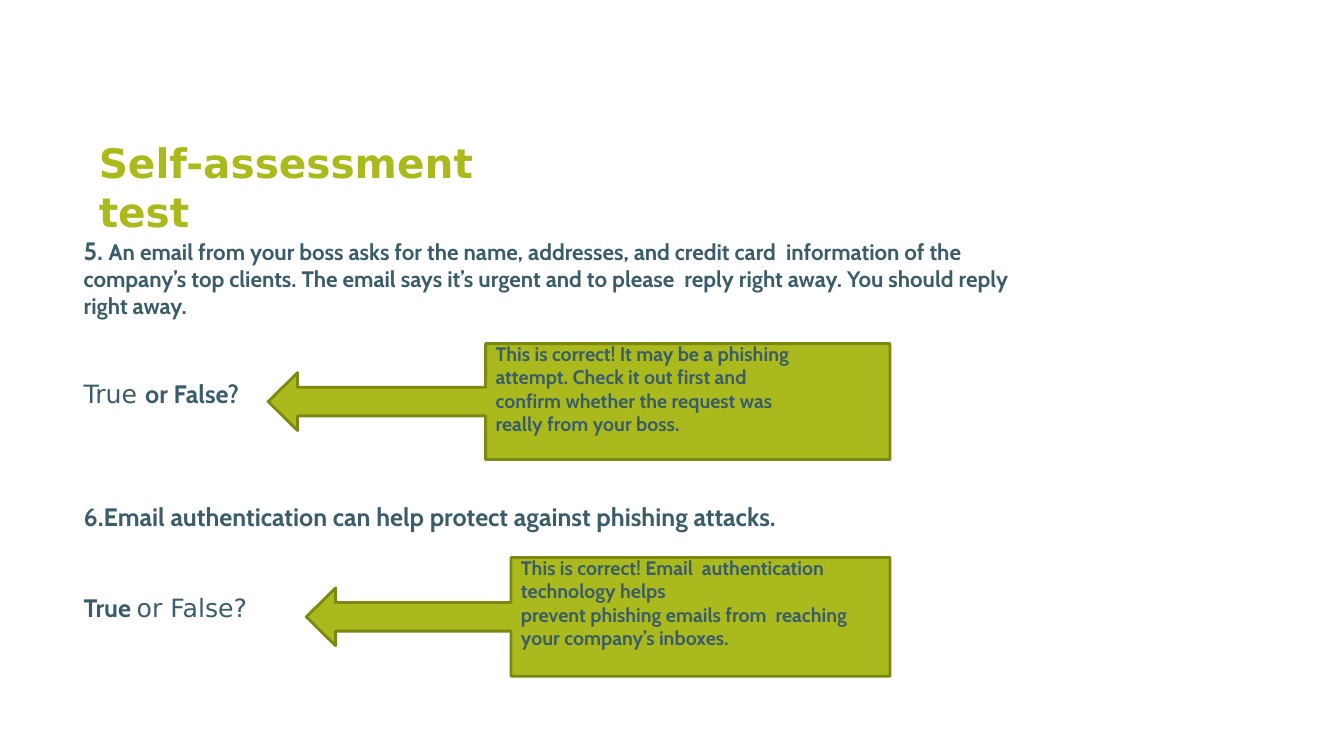
from pptx import Presentation
from pptx.dml.color import RGBColor
from pptx.util import Cm, Pt

LIME = RGBColor(0xAA, 0xBA, 0x1D)
OLIVE = RGBColor(0x7B, 0x88, 0x12)
SLATE = RGBColor(0x3B, 0x5D, 0x6A)
HEADING_FONT = "DejaVu Sans"
BODY_FONT = "Cabin"
HEAD_LENGTH, HEAD_HALF, SHAFT_HALF = 0.74, 0.73, 0.36


def add_text(slide, left, top, width, height, paragraphs, color=SLATE):
    """Place paragraphs made of (text, size, font, bold) runs in a box given in cm."""
    frame = slide.shapes.add_textbox(Cm(left), Cm(top), Cm(width), Cm(height)).text_frame
    frame.word_wrap = True
    frame.margin_left = frame.margin_top = Cm(0.03)
    frame.margin_right = frame.margin_bottom = 0
    for number, pieces in enumerate(paragraphs):
        paragraph = frame.add_paragraph() if number else frame.paragraphs[0]
        for text, size, font, bold in pieces:
            run = paragraph.add_run()
            run.text = text
            run.font.size = Pt(size)
            run.font.name = font
            run.font.bold = bold
            run.font.color.rgb = color


def add_callout(slide, left, top, right, height, body_left, answer):
    """Draw an answer panel whose arrow points left to the choice."""
    middle, bottom = top + height / 2, top + height
    neck = left + HEAD_LENGTH
    outline = [
        (neck, middle - HEAD_HALF), (neck, middle - SHAFT_HALF),
        (body_left, middle - SHAFT_HALF), (body_left, top),
        (right, top), (right, bottom), (body_left, bottom),
        (body_left, middle + SHAFT_HALF), (neck, middle + SHAFT_HALF),
        (neck, middle + HEAD_HALF),
    ]
    builder = slide.shapes.build_freeform(Cm(left), Cm(middle))
    builder.add_line_segments([(Cm(x), Cm(y)) for x, y in outline], close=True)
    panel = builder.convert_to_shape()
    panel.shadow.inherit = False
    panel.fill.solid()
    panel.fill.fore_color.rgb = LIME
    panel.line.color.rgb = OLIVE
    panel.line.width = Pt(2)
    add_text(slide, body_left + 0.22, top - 0.08, 8.8, 2.5,
             [[(line, 14, BODY_FONT, True)] for line in answer])


def add_question(slide, box, question, choice, callout, answer):
    """Place a question, its choice and its answer callout in a box."""
    left, top, width, height = box
    tip, body, panel_width, panel_height = callout
    panel_top = top + height - panel_height
    add_text(slide, left, top, width, height - panel_height, [question])
    add_text(slide, left, panel_top + 0.85, 4.6, 0.84, [choice])
    add_callout(slide, left + tip, panel_top, left + panel_width, panel_height,
                left + body, answer)


def add_title(slide, left, top, width, height):
    """Place the slide heading."""
    add_text(slide, left, top, width, height,
             [[("Self-assessment test", 29, HEADING_FONT, True)]], LIME)


def main():
    """Build the self-assessment slide and save it."""
    deck = Presentation()
    deck.slide_width, deck.slide_height = Cm(33.87), Cm(19.05)
    slide = deck.slides.add_slide(deck.slide_layouts[6])
    add_title(slide, 2.46, 3.45, 11.38, 1.3)
    add_question(
        slide, (2.08, 5.89, 24.13, 5.69),
        [("5. ", 18, BODY_FONT, True),
         ("An email from your boss asks for the name, addresses, and credit card  "
          "information of the company’s top clients. The email says it’s urgent and "
          "to please  reply right away. You should reply right away.",
          16, BODY_FONT, True)],
        [("True ", 18, HEADING_FONT, False), ("or False?", 18, BODY_FONT, True)],
        (4.68, 10.16, 20.35, 2.92),
        ["This is correct! It may be a phishing  attempt. Check it out first and",
         "confirm whether the request was", "really from your boss."])
    add_question(
        slide, (2.08, 12.6, 24.13, 4.44),
        [("6.Email authentication can help protect against phishing attacks.",
          18, BODY_FONT, True)],
        [("True ", 18, BODY_FONT, True), ("or False?", 18, HEADING_FONT, False)],
        (5.64, 10.8, 20.35, 2.99),
        ["This is correct! Email  authentication technology helps",
         "prevent phishing emails from  reaching your company’s inboxes."])
    deck.save("out.pptx")


if __name__ == "__main__":
    main()
